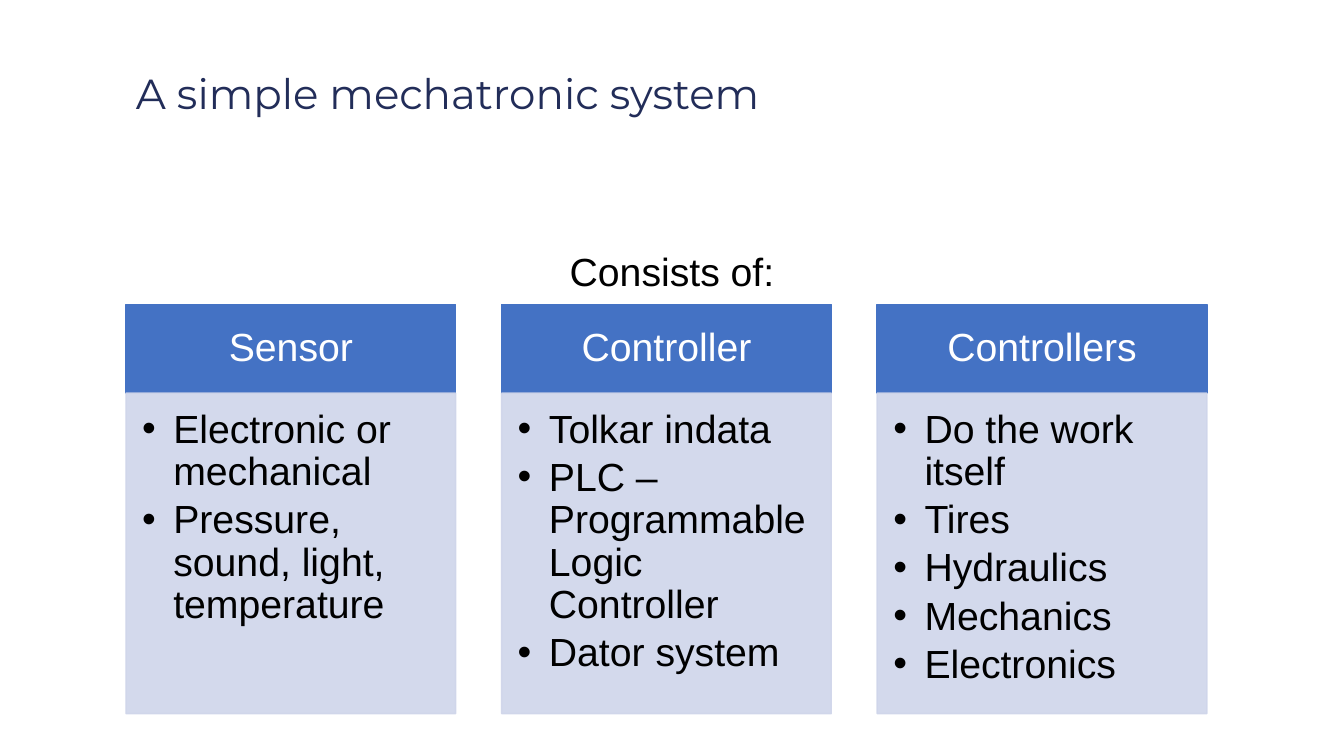
import pptx
import pptx.dml.color
import pptx.enum.shapes
import pptx.enum.text
import pptx.oxml
import pptx.oxml.ns
import pptx.util
from pptx.util import Inches

RGBColor = pptx.dml.color.RGBColor
ALIGN = pptx.enum.text.PP_ALIGN
ANCHOR = pptx.enum.text.MSO_ANCHOR

NAVY = RGBColor(0x22, 0x2D, 0x59)
BLUE = RGBColor(0x44, 0x72, 0xC4)
PALE_BLUE = RGBColor(0xCF, 0xD5, 0xEA)
BLACK = RGBColor(0, 0, 0)
WHITE = RGBColor(0xFF, 0xFF, 0xFF)

LEFT = 1.25
SPAN = 10.72
COLUMN_WIDTH = 3.27
HEADER_TOP, HEADER_HEIGHT = 3.02, 0.88
BODY_HEIGHT = 3.18

COLUMNS = [
    ("Sensor", ["Electronic or mechanical", "Pressure, sound, light, temperature"]),
    ("Controller", ["Tolkar indata", "PLC – Programmable Logic Controller", "Dator system"]),
    ("Controllers", ["Do the work itself", "Tires", "Hydraulics", "Mechanics", "Electronics"]),
]


def set_attributes(target, values):
    for name, value in values.items():
        setattr(target, name, value)


def set_margins(frame, left, top, right, bottom):
    set_attributes(frame, {
        "margin_left": Inches(left), "margin_top": Inches(top),
        "margin_right": Inches(right), "margin_bottom": Inches(bottom)})


def add_bullet(paragraph):
    properties = paragraph._p.get_or_add_pPr()
    properties.set("marL", str(Inches(0.31)))
    properties.set("indent", str(-Inches(0.31)))
    namespace = pptx.oxml.ns.nsdecls("a")
    properties.append(pptx.oxml.parse_xml(f'<a:buFont {namespace} typeface="Arial"/>'))
    properties.append(pptx.oxml.parse_xml(f'<a:buChar {namespace} char="•"/>'))


def write_paragraphs(frame, lines, color, size=28, font="Arial",
                     alignment=ALIGN.LEFT, space_after=0, bulleted=False):
    for index, line in enumerate(lines):
        paragraph = frame.add_paragraph() if index else frame.paragraphs[0]
        paragraph.text = line
        if bulleted:
            add_bullet(paragraph)
        set_attributes(paragraph, {
            "alignment": alignment, "line_spacing": 0.9,
            "space_before": pptx.util.Pt(0), "space_after": pptx.util.Pt(space_after)})
        set_attributes(paragraph.font, {"name": font, "size": pptx.util.Pt(size)})
        paragraph.font.color.rgb = color


def add_text(slide, top, height, text, color, **style):
    box = slide.shapes.add_textbox(Inches(LEFT), Inches(top), Inches(10.83), Inches(height))
    box.text_frame.word_wrap = True
    write_paragraphs(box.text_frame, [text], color, **style)


def add_panel(slide, left, top, height, color, opacity=100):
    panel = slide.shapes.add_shape(
        pptx.enum.shapes.MSO_SHAPE.RECTANGLE,
        Inches(left), Inches(top), Inches(COLUMN_WIDTH), Inches(height))
    panel.shadow.inherit = False
    panel.fill.solid()
    panel.fill.fore_color.rgb = color
    panel.line.color.rgb = color
    panel.line.width = pptx.util.Pt(1)
    if opacity < 100:
        for color_element in panel._element.spPr.iter(pptx.oxml.ns.qn("a:srgbClr")):
            color_element.append(pptx.oxml.parse_xml(
                f'<a:alpha {pptx.oxml.ns.nsdecls("a")} val="{opacity * 1000}"/>'))
    panel.text_frame.word_wrap = True
    return panel.text_frame


def add_column(slide, left, heading, items):
    # Header band
    header = add_panel(slide, left, HEADER_TOP, HEADER_HEIGHT, BLUE)
    header.vertical_anchor = ANCHOR.MIDDLE
    set_margins(header, 0.22, 0.12, 0.22, 0.12)
    write_paragraphs(header, [heading], WHITE, alignment=ALIGN.CENTER)

    # Bulleted body
    body = add_panel(slide, left, HEADER_TOP + HEADER_HEIGHT, BODY_HEIGHT, PALE_BLUE, opacity=90)
    body.vertical_anchor = ANCHOR.TOP
    set_margins(body, 0.16, 0.16, 0.22, 0.24)
    write_paragraphs(body, items, BLACK, space_after=4.2, bulleted=True)


def main():
    presentation = pptx.Presentation()
    presentation.slide_width = Inches(13.33)
    presentation.slide_height = Inches(7.5)
    slide = presentation.slides.add_slide(presentation.slide_layouts[6])

    # Title and lead-in
    add_text(slide, 0.68, 1.62, "A simple mechatronic system", NAVY, size=30, font="Montserrat")
    add_text(slide, 2.46, 3.87, "Consists of:", BLACK, alignment=ALIGN.CENTER)

    # Equally spaced columns
    pitch = (SPAN - COLUMN_WIDTH) / (len(COLUMNS) - 1)
    for index, (heading, items) in enumerate(COLUMNS):
        add_column(slide, LEFT + index * pitch, heading, items)

    presentation.save("out.pptx")


if __name__ == "__main__":
    main()
